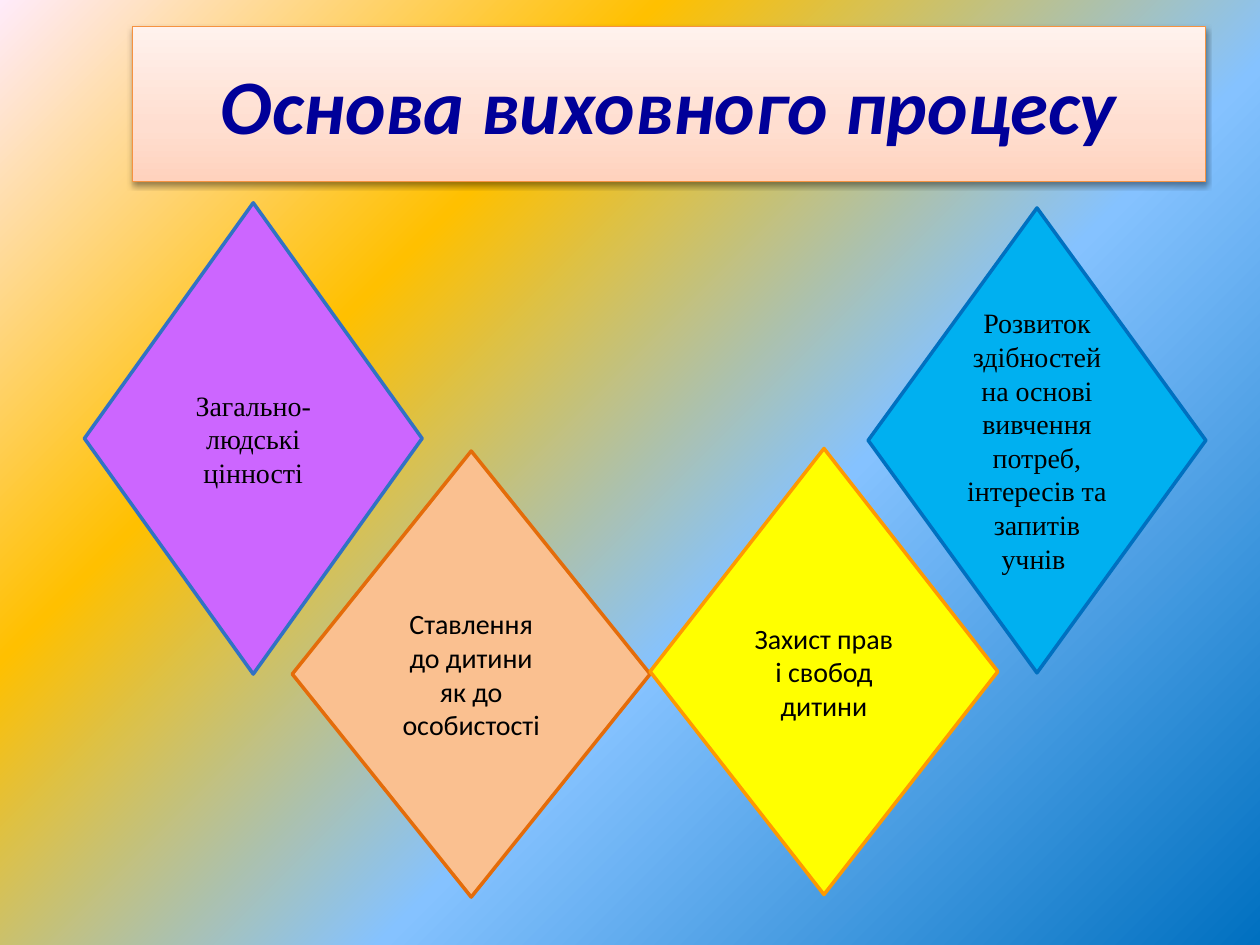
from lxml import etree
from pptx import Presentation
from pptx.dml.color import RGBColor
from pptx.enum.shapes import MSO_SHAPE
from pptx.enum.text import MSO_ANCHOR, PP_ALIGN
from pptx.oxml.ns import qn
from pptx.util import Inches, Pt

DIAMOND = MSO_SHAPE.FLOWCHART_DECISION
CENTER = PP_ALIGN.CENTER
MIDDLE = MSO_ANCHOR.MIDDLE

BLACK = RGBColor(0, 0, 0)
NAVY = RGBColor(0x00, 0x00, 0x99)
ORANGE = RGBColor(0xF6, 0x92, 0x40)
PURPLE = RGBColor(0xCC, 0x66, 0xFF)
STEEL = RGBColor(0x31, 0x72, 0xC4)
SKY = RGBColor(0x00, 0xB0, 0xF0)
BLUE = RGBColor(0x00, 0x70, 0xC0)
LIGHT_BLUE = RGBColor(0x85, 0xC2, 0xFF)
GOLD = RGBColor(0xFF, 0xC0, 0x00)
PINK = RGBColor(0xFF, 0xEB, 0xFA)
PEACH = RGBColor(0xFA, 0xC0, 0x90)
RUST = RGBColor(0xE4, 0x6C, 0x0A)
YELLOW = RGBColor(0xFF, 0xFF, 0x00)
AMBER = RGBColor(0xFF, 0x99, 0x00)

BACKGROUND = [(0, BLUE), (40, LIGHT_BLUE), (70, GOLD), (100, PINK)]
BANNER = [(0, RGBColor(0xFF, 0xD2, 0xBD)), (35, RGBColor(0xFF, 0xDE, 0xD0)),
          (100, RGBColor(0xFF, 0xF2, 0xED))]

SERIF, SANS = "Times New Roman", "Calibri"
VALUES = [
    ("Загально-людські цінності", (0.67, 1.61, 2.68, 3.74), PURPLE, STEEL, SERIF),
    ("Розвиток здібностей на основі вивчення потреб, інтересів та запитів учнів ",
     (6.89, 1.65, 2.68, 3.69), SKY, BLUE, SERIF),
    ("Ставлення до дитини як до особистості", (2.32, 3.58, 2.84, 3.54), PEACH, RUST, SANS),
    ("Захист прав і свобод дитини", (5.16, 3.56, 2.76, 3.54), YELLOW, AMBER, SANS),
]


def add(parent, tag, **attrs):
    return etree.SubElement(parent, qn(tag), {k: str(v) for k, v in attrs.items()})


def set_gradient(owner, fill, stops, angle=None):
    fill.gradient()
    grad = next(owner.element.iter(qn("a:gradFill")))
    for child in list(grad):
        grad.remove(child)
    gs_lst = add(grad, "a:gsLst")
    for pos, color in stops:
        gs = add(gs_lst, "a:gs", pos=pos * 1000)
        add(gs, "a:srgbClr", val=color)
    if angle is None:
        route = add(grad, "a:path", path="circle")
        add(route, "a:fillToRect", l=100000, t=100000)
        add(grad, "a:tileRect", r=-100000, b=-100000)
    else:
        add(grad, "a:lin", ang=angle * 60000, scaled=1)


def add_shadow(sp):
    effects = next(sp.element.iter(qn("a:effectLst")))
    shadow = add(effects, "a:outerShdw", blurRad=Pt(3.1), dist=Pt(1.6),
                 dir=90 * 60000, rotWithShape=0)
    color = add(shadow, "a:srgbClr", val=BLACK)
    add(color, "a:alpha", val=38000)


def set_text(sp, text, size=16, font=SANS, color=BLACK, bold=False, italic=False):
    tf = sp.text_frame
    tf.word_wrap = True
    tf.vertical_anchor = MIDDLE
    p = tf.paragraphs[0]
    p.alignment = CENTER
    r = p.add_run()
    r.text = text
    r.font.size = Pt(size)
    r.font.name = font
    r.font.color.rgb = color
    r.font.bold = bold
    r.font.italic = italic


def set_line(sp, color, width):
    sp.line.color.rgb = color
    sp.line.width = Pt(width)


def format_title(sp, text):
    sp.left, sp.top, sp.width, sp.height = map(Inches, (1.05, 0.21, 8.52, 1.23))
    set_gradient(sp, sp.fill, BANNER, angle=270)
    set_line(sp, ORANGE, 0.75)
    sp.shadow.inherit = False
    add_shadow(sp)
    set_text(sp, text, size=44, color=NAVY, bold=True, italic=True)


def add_diamond(s, text, box, fill, line, font):
    sp = s.shapes.add_shape(DIAMOND, *map(Inches, box))
    sp.shadow.inherit = False
    sp.fill.solid()
    sp.fill.fore_color.rgb = fill
    set_line(sp, line, 2)
    set_text(sp, text, font=font)


def main():
    prs = Presentation()
    prs.slide_width, prs.slide_height = Inches(10), Inches(7.5)
    s = prs.slides.add_slide(prs.slide_layouts[5])
    set_gradient(s, s.background.fill, BACKGROUND)
    format_title(s.shapes.title, "Основа виховного процесу")
    for value in VALUES:
        add_diamond(s, *value)
    prs.save("out.pptx")


if __name__ == "__main__":
    main()
